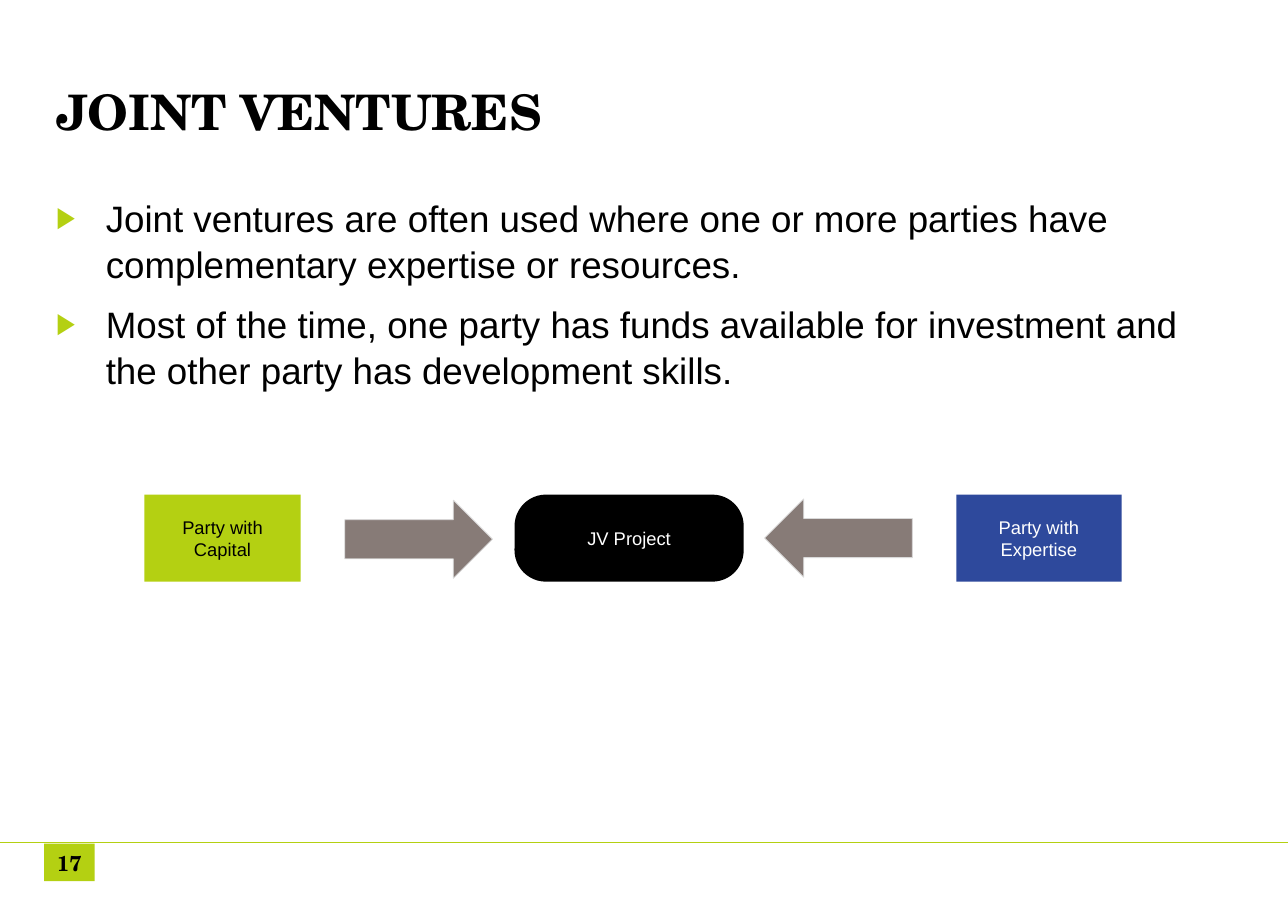
from dataclasses import dataclass

from lxml import etree
from pptx import Presentation
from pptx.dml.color import RGBColor
from pptx.enum.shapes import MSO_CONNECTOR, MSO_SHAPE
from pptx.enum.text import MSO_ANCHOR, PP_ALIGN
from pptx.oxml.ns import qn
from pptx.slide import Slide
from pptx.text.text import TextFrame, _Paragraph
from pptx.util import Emu, Pt

RECT = MSO_SHAPE.RECTANGLE
ROUNDED = MSO_SHAPE.ROUNDED_RECTANGLE
RIGHT_ARROW = MSO_SHAPE.RIGHT_ARROW
LEFT_ARROW = MSO_SHAPE.LEFT_ARROW
STRAIGHT = MSO_CONNECTOR.STRAIGHT
TOP, MIDDLE = MSO_ANCHOR.TOP, MSO_ANCHOR.MIDDLE
CENTER = PP_ALIGN.CENTER

LIME = RGBColor(0xB4, 0xD0, 0x12)
BLUE = RGBColor(0x2E, 0x49, 0x9C)
TAUPE = RGBColor(0x87, 0x7B, 0x77)
PALE_GREY = RGBColor(0xD9, 0xD9, 0xD9)
BLACK = RGBColor(0, 0, 0)
WHITE = RGBColor(0xFF, 0xFF, 0xFF)

SERIF = "TeX Gyre Schola"
SANS = "Arial"
EMU_PER_PX = 9144  # 100 px to the inch
SLIDE_W, SLIDE_H = 1169, 827


@dataclass(frozen=True)
class Box:
    left: int
    top: int
    width: int
    height: int


@dataclass(frozen=True)
class TextStyle:
    font: str
    size: int
    color: RGBColor
    bold: bool = False


@dataclass(frozen=True)
class Block:
    label: str
    box: Box
    fill: RGBColor
    style: TextStyle
    preset: MSO_SHAPE = RECT
    inset_x: int = 10
    inset_y: int = 5


@dataclass(frozen=True)
class Arrow:
    preset: MSO_SHAPE
    box: Box


TITLE = TextStyle(SERIF, 32, BLACK, bold=True)
BODY = TextStyle(SANS, 24, BLACK)
PAGE_NUMBER = TextStyle(SERIF, 14, BLACK, bold=True)
DARK_LABEL = TextStyle(SANS, 12, BLACK)
LIGHT_LABEL = TextStyle(SANS, 12, WHITE)

POINTS = [
    "Joint ventures are often used where one or more parties have "
    "complementary expertise or resources.",
    "Most of the time, one party has funds available for investment and "
    "the other party has development skills.",
]
BLOCKS = [
    Block("17", Box(40, 766, 46, 34), LIME, PAGE_NUMBER, inset_x=2, inset_y=6),
    Block("Party with Capital", Box(131, 449, 142, 79), LIME, DARK_LABEL),
    Block("JV Project", Box(467, 449, 208, 79), BLACK, LIGHT_LABEL, ROUNDED, inset_x=4),
    Block("Party with Expertise", Box(868, 449, 150, 79), BLUE, LIGHT_LABEL),
]
ARROWS = [
    Arrow(RIGHT_ARROW, Box(313, 454, 134, 71)),
    Arrow(LEFT_ARROW, Box(694, 453, 134, 71)),
]


def px(length: int) -> Emu:
    return Emu(length * EMU_PER_PX)


def place(box: Box) -> tuple[Emu, Emu, Emu, Emu]:
    return px(box.left), px(box.top), px(box.width), px(box.height)


def set_up_frame(frame: TextFrame, anchor: MSO_ANCHOR, inset_x: int, inset_y: int) -> None:
    frame.word_wrap = True
    frame.vertical_anchor = anchor
    frame.margin_left = frame.margin_right = px(inset_x)
    frame.margin_top = frame.margin_bottom = px(inset_y)


def style_paragraph(paragraph: _Paragraph, style: TextStyle) -> None:
    font = paragraph.font
    font.name, font.size, font.bold = style.font, Pt(style.size), style.bold
    font.color.rgb = style.color


def add_bullet(paragraph: _Paragraph) -> None:
    """Give the paragraph a hanging lime triangle at 80 % of the text size."""
    properties = paragraph._p.get_or_add_pPr()
    properties.set("marL", str(px(45)))
    properties.set("indent", str(px(-45)))
    color = etree.SubElement(properties, qn("a:buClr"))
    etree.SubElement(color, qn("a:srgbClr"), val=str(LIME))
    etree.SubElement(properties, qn("a:buSzPct"), val="80000")
    etree.SubElement(properties, qn("a:buFont"), typeface=SANS)
    etree.SubElement(properties, qn("a:buChar"), char="▶")


def add_text_box(slide: Slide, box: Box, anchor: MSO_ANCHOR) -> TextFrame:
    frame = slide.shapes.add_textbox(*place(box)).text_frame
    set_up_frame(frame, anchor, 11, 6)
    return frame


def add_title(slide: Slide) -> None:
    frame = add_text_box(slide, Box(40, 40, 1088, 122), MIDDLE)
    frame.text = "JOINT VENTURES"
    style_paragraph(frame.paragraphs[0], TITLE)


def add_points(slide: Slide) -> None:
    frame = add_text_box(slide, Box(40, 170, 1088, 204), TOP)
    for index, point in enumerate(POINTS):
        paragraph = frame.add_paragraph() if index else frame.paragraphs[0]
        paragraph.text = point
        paragraph.line_spacing = 1.04
        paragraph.space_before = Pt(4.8 if index else 0)
        paragraph.space_after = Pt(4.6)
        add_bullet(paragraph)
        style_paragraph(paragraph, BODY)


def add_footer_rule(slide: Slide) -> None:
    rule = slide.shapes.add_connector(STRAIGHT, 0, px(765), px(SLIDE_W), px(765))
    rule.line.color.rgb = LIME
    rule.line.width = Pt(0.75)
    etree.SubElement(rule._element.spPr, qn("a:effectLst"))


def add_block(slide: Slide, block: Block) -> None:
    shape = slide.shapes.add_shape(block.preset, *place(block.box))
    shape.shadow.inherit = False
    shape.fill.solid()
    shape.fill.fore_color.rgb = block.fill
    shape.line.fill.background()
    if block.preset == ROUNDED:
        shape.adjustments[0] = 0.36
    frame = shape.text_frame
    set_up_frame(frame, MIDDLE, block.inset_x, block.inset_y)
    frame.text = block.label
    frame.paragraphs[0].alignment = CENTER
    style_paragraph(frame.paragraphs[0], block.style)


def add_arrow(slide: Slide, arrow: Arrow) -> None:
    shape = slide.shapes.add_shape(arrow.preset, *place(arrow.box))
    shape.shadow.inherit = False
    shape.fill.solid()
    shape.fill.fore_color.rgb = TAUPE
    shape.line.color.rgb = PALE_GREY
    shape.line.width = Pt(0.5)


def main() -> None:
    deck = Presentation()
    deck.slide_width, deck.slide_height = px(SLIDE_W), px(SLIDE_H)
    slide = deck.slides.add_slide(deck.slide_layouts[6])
    add_footer_rule(slide)
    add_title(slide)
    add_points(slide)
    for block in BLOCKS:
        add_block(slide, block)
    for arrow in ARROWS:
        add_arrow(slide, arrow)
    deck.save("out.pptx")


if __name__ == "__main__":
    main()
